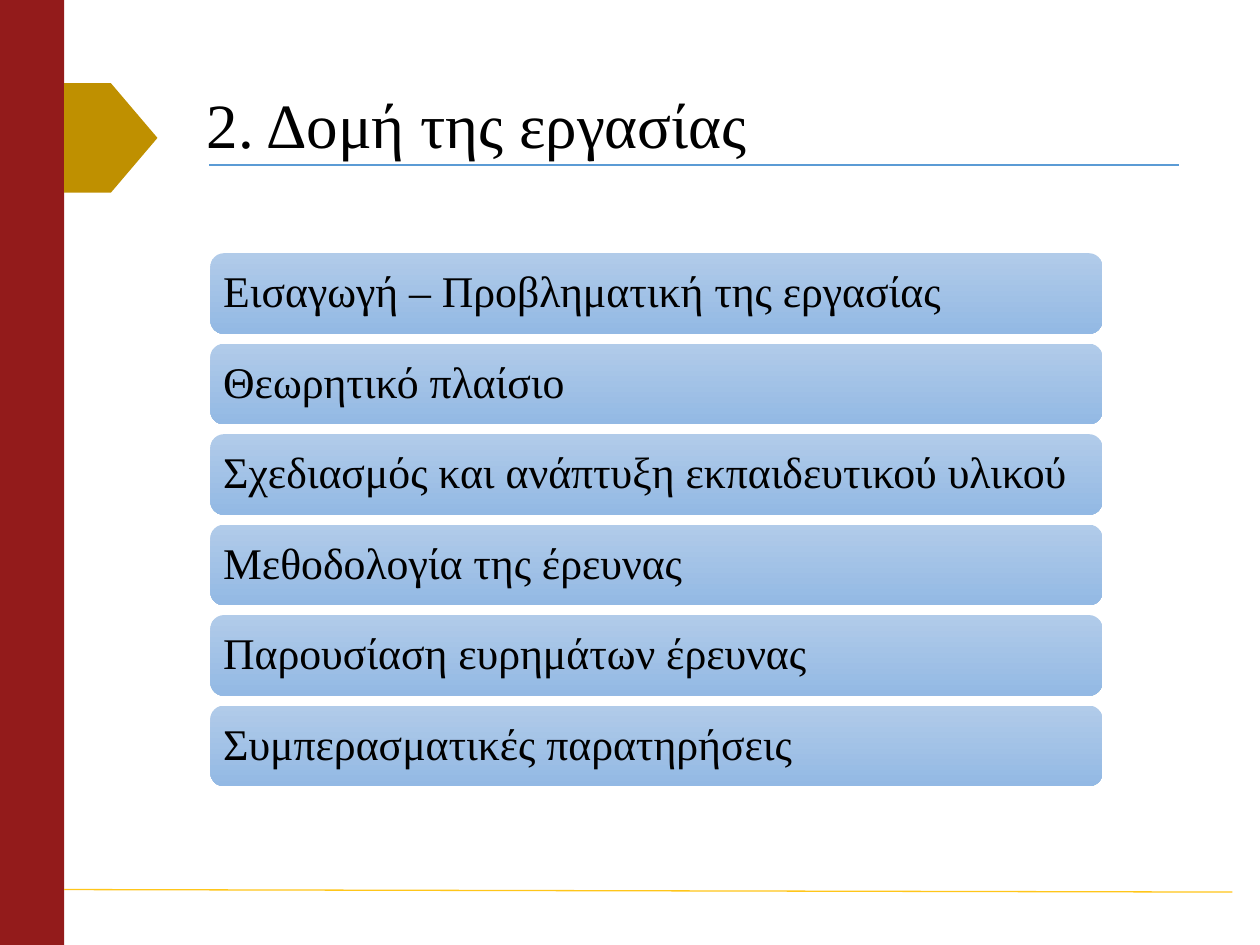
from lxml import etree
from pptx import Presentation, util as u
from pptx.dml.color import RGBColor
from pptx.enum import shapes, text
from pptx.oxml.ns import qn

TOPICS = [
    "Εισαγωγή – Προβληματική της εργασίας",
    "Θεωρητικό πλαίσιο",
    "Σχεδιασμός και ανάπτυξη εκπαιδευτικού υλικού",
    "Μεθοδολογία της έρευνας",
    "Παρουσίαση ευρημάτων έρευνας",
    "Συμπερασματικές παρατηρήσεις",
]
color = RGBColor.from_string


def write(holder, words, size, inset=0.1, font="Times New Roman", ink="000000"):
    frame = holder.text_frame
    frame.text = words
    frame.word_wrap = True
    frame.auto_size = text.MSO_AUTO_SIZE.NONE
    frame.vertical_anchor = text.MSO_ANCHOR.MIDDLE
    frame.margin_left = frame.margin_right = u.Inches(inset)
    line = frame.paragraphs[0]
    line.alignment = text.PP_ALIGN.LEFT
    line.line_spacing = 0.9
    line.font.size, line.font.name = u.Pt(size), font
    line.font.color.rgb = color(ink)


def block(preset, left, top, width, height):
    item = slide.shapes.add_shape(preset, *map(u.Inches, (left, top, width, height)))
    item.shadow.inherit = False
    item.line.fill.background()
    return item


deck = Presentation()
deck.slide_width, deck.slide_height = u.Inches(10), u.Inches(7.5)
slide = deck.slides.add_slide(deck.slide_layouts[5])

# Side band and pointer
BAND = 0.51
for preset, box, fill in [
    (shapes.MSO_SHAPE.RECTANGLE, (0, 0, BAND, 7.5), "931B1B"),
    (shapes.MSO_SHAPE.PENTAGON, (BAND, 0.66, 0.74, 0.87), "BF9000"),
]:
    decoration = block(preset, *box)
    decoration.fill.solid()
    decoration.fill.fore_color.rgb = color(fill)

# Rules under the title and at the foot
for ends, stroke in [
    ((1.66, 1.31, 9.36, 1.31), "5B9BD5"),
    ((BAND, 7.06, 9.78, 7.08), "FFC61A"),
]:
    rule = slide.shapes.add_connector(shapes.MSO_CONNECTOR.STRAIGHT, *map(u.Inches, ends))
    rule.line.color.rgb = color(stroke)
    rule.line.width = u.Pt(0.75)
    etree.SubElement(rule._element.spPr, qn("a:effectLst"))

# Title
title = slide.shapes.title
title.left, title.top, title.width, title.height = map(u.Inches, (1.54, 0.6, 7.87, 0.84))
write(title, "2. Δομή της εργασίας", 36)

# Topic bars, evenly stacked
FIRST, PITCH = 2.01, 0.718
for row, topic in enumerate(TOPICS):
    bar = block(shapes.MSO_SHAPE.ROUNDED_RECTANGLE, 1.67, FIRST + row * PITCH, 7.08, 0.64)
    bar.fill.gradient()
    bar.fill.gradient_angle = 270
    for stop, shade in zip(bar.fill.gradient_stops, ("B1CBE9", "93B9E4")):
        stop.color.rgb = color(shade)
    write(bar, topic, 25, inset=0.07)

deck.save("out.pptx")
